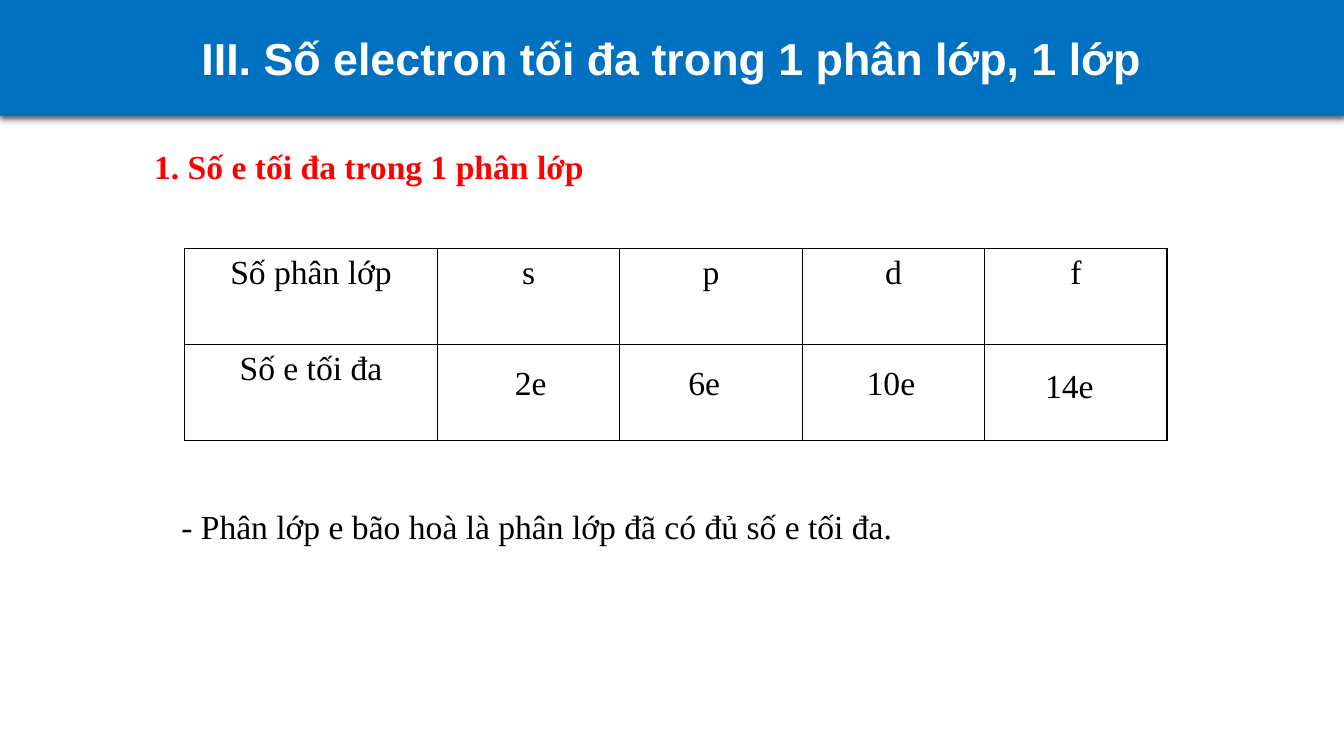
from lxml.etree import SubElement
from pptx import Presentation
from pptx.dml.color import RGBColor
from pptx.enum.shapes import MSO_SHAPE
from pptx.enum.text import MSO_ANCHOR, MSO_AUTO_SIZE, PP_ALIGN
from pptx.oxml import parse_xml
from pptx.oxml.ns import qn
from pptx.util import Pt

BLUE = RGBColor(0x00, 0x70, 0xC0)
WHITE = RGBColor(0xFF, 0xFF, 0xFF)
RED = RGBColor(0xFF, 0x00, 0x00)
BLACK = RGBColor(0x00, 0x00, 0x00)
SERIF = "Times New Roman"

TITLE = "III. Số electron tối đa trong 1 phân lớp, 1 lớp"
HEADING = "1. Số e tối đa trong 1 phân lớp"
NOTE = "- Phân lớp e bão hoà là phân lớp đã có đủ số e tối đa."
ROWS = [
    ["Số phân lớp", "s", "p", "d", "f"],
    ["Số e tối đa", "", "", "", ""],
]
# Text, left and top of each answer laid over the second row
ANSWERS = [
    ("2e", 360.7, 254.9),
    ("6e", 484.6, 254.9),
    ("10e", 612, 254.9),
    ("14e", 739.4, 257),
]

WIDTH, HEIGHT = 960, 540
LEFT, TOP = 131.8, 177.8
FIRST_COL, COL, ROW = 180.7, 130.3, 68.4

SHADOW = (
    '<a:effectLst xmlns:a="http://schemas.openxmlformats.org/drawingml/2006/main">'
    '<a:outerShdw blurRad="57150" dist="19050" dir="5400000" algn="ctr" rotWithShape="0">'
    '<a:srgbClr val="000000"><a:alpha val="63000"/></a:srgbClr>'
    '</a:outerShdw></a:effectLst>'
)


def write(frame, text, size=24, color=BLACK, name=SERIF, bold=False,
          align=PP_ALIGN.LEFT, spacing=None):
    frame.text = text
    para = frame.paragraphs[0]
    para.alignment = align
    para.line_spacing = spacing
    for run in para.runs:
        font = run.font
        font.size, font.name, font.bold = Pt(size), name, bold
        font.color.rgb = color


def add_text(slide, text, left, top, width, height, wrap=False, **style):
    box = slide.shapes.add_textbox(Pt(left), Pt(top), Pt(width), Pt(height))
    frame = box.text_frame
    frame.word_wrap = wrap
    frame.auto_size = MSO_AUTO_SIZE.SHAPE_TO_FIT_TEXT
    write(frame, text, **style)


def add_title(slide):
    bar = slide.shapes.add_shape(MSO_SHAPE.RECTANGLE, 0, 0, Pt(WIDTH), Pt(82.8))
    bar.fill.solid()
    bar.fill.fore_color.rgb = BLUE
    bar.line.fill.background()
    bar._element.spPr.append(parse_xml(SHADOW))
    bar.text_frame.vertical_anchor = MSO_ANCHOR.MIDDLE
    write(bar.text_frame, TITLE, 32, WHITE, "Arial", True, PP_ALIGN.CENTER)


def add_border(cell):
    props = cell._tc.get_or_add_tcPr()
    for side in ("a:lnL", "a:lnR", "a:lnT", "a:lnB"):
        line = SubElement(props, qn(side), w=str(Pt(1)))
        fill = SubElement(line, qn("a:solidFill"))
        SubElement(fill, qn("a:srgbClr"), val=str(BLACK))


def add_grid(slide):
    count = len(ROWS[0])
    frame = slide.shapes.add_table(
        len(ROWS), count, Pt(LEFT), Pt(TOP),
        Pt(FIRST_COL + COL * (count - 1)), Pt(ROW * len(ROWS)))
    table = frame.table
    table.first_row = table.horz_banding = False
    for i, col in enumerate(table.columns):
        col.width = Pt(COL if i else FIRST_COL)
    for row, texts in zip(table.rows, ROWS):
        row.height = Pt(ROW)
        for cell, text in zip(row.cells, texts):
            cell.margin_left = cell.margin_right = Pt(5)
            cell.margin_top = cell.margin_bottom = 0
            add_border(cell)
            cell.fill.background()
            write(cell.text_frame, text, align=PP_ALIGN.CENTER, spacing=1.15)


def main():
    deck = Presentation()
    deck.slide_width, deck.slide_height = Pt(WIDTH), Pt(HEIGHT)
    slide = deck.slides.add_slide(deck.slide_layouts[6])
    add_title(slide)
    add_text(slide, HEADING, 103, 100.8, 324.7, 36, color=RED, bold=True)
    add_grid(slide)
    add_text(slide, NOTE, 122.4, 353.5, 527, 38.2,
             align=PP_ALIGN.JUSTIFY, spacing=1.15)
    for text, left, top in ANSWERS:
        add_text(slide, text, left, top, 74.9, 36, wrap=True)
    deck.save("out.pptx")


if __name__ == "__main__":
    main()
